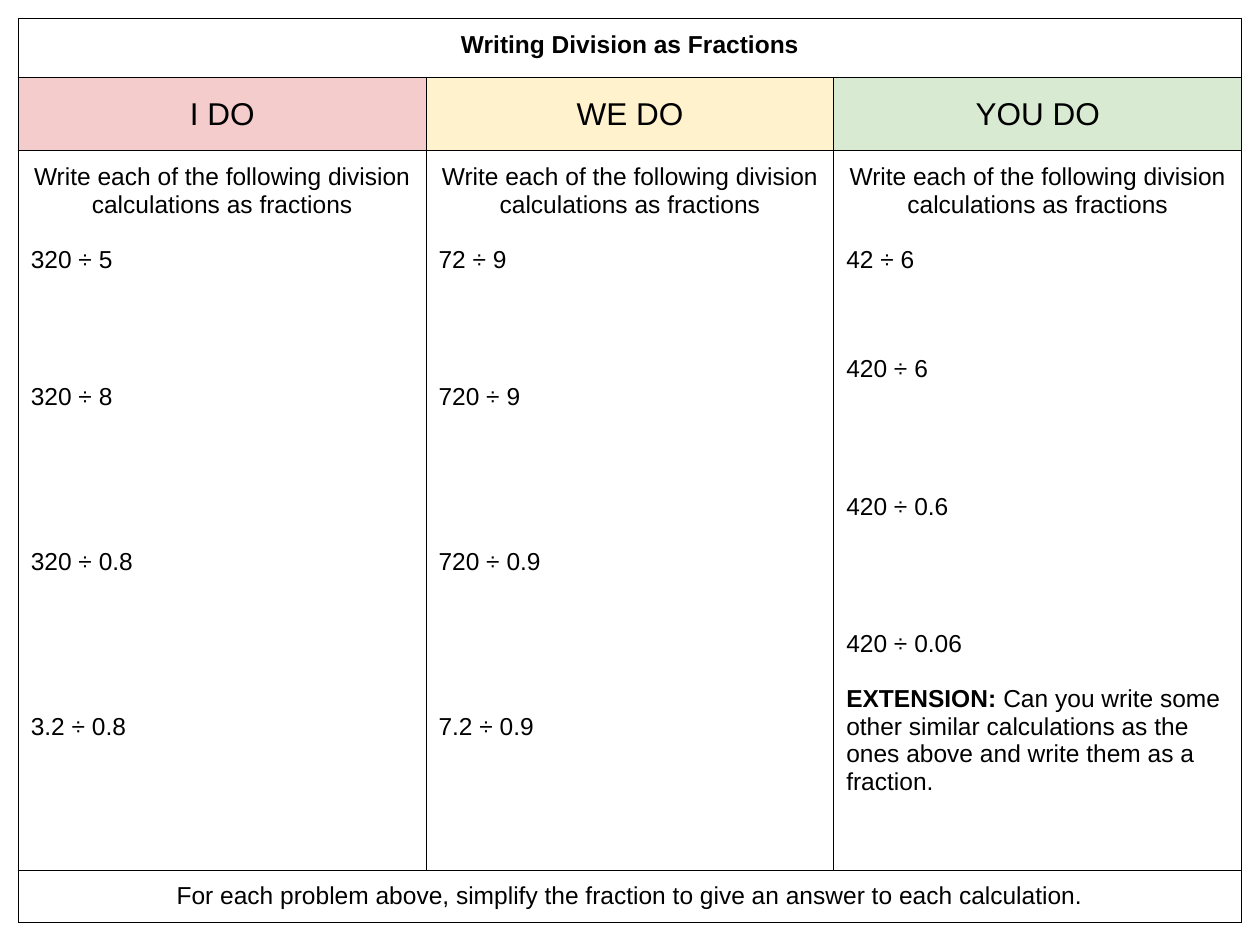
import lxml.etree
import pptx
import pptx.dml.color
import pptx.enum.text
import pptx.oxml.ns
import pptx.util

Cm = pptx.util.Cm
Pt = pptx.util.Pt
ALIGN = pptx.enum.text.PP_ALIGN
ANCHOR = pptx.enum.text.MSO_ANCHOR

FONT = "Arial"
BLACK = "000000"
LINE_PITCH = 15.7  # points taken by one line of 14 pt text

COLUMN_WIDTH = 8.22
ROW_HEIGHTS = [1.2, 1.47, 14.5, 1.05]

TITLE = "Writing Division as Fractions"
INSTRUCTION = "Write each of the following division calculations as fractions"
FOOTER = "For each problem above, simplify the fraction to give an answer to each calculation."
EXTENSION_LABEL = "EXTENSION: "
EXTENSION = ("Can you write some other similar calculations as the ones above "
             "and write them as a fraction.")

# heading, fill, calculations, free lines before each calculation
COLUMNS = [
    ("I DO", "F4CCCC", ["320 ÷ 5", "320 ÷ 8", "320 ÷ 0.8", "3.2 ÷ 0.8"], [1, 4, 5, 5]),
    ("WE DO", "FFF2CC", ["72 ÷ 9", "720 ÷ 9", "720 ÷ 0.9", "7.2 ÷ 0.9"], [1, 4, 5, 5]),
    ("YOU DO", "D9EAD3", ["42 ÷ 6", "420 ÷ 6", "420 ÷ 0.6", "420 ÷ 0.06"], [1, 3, 4, 4]),
]


def color(hex_string):
    return pptx.dml.color.RGBColor.from_string(hex_string)


def add_run(paragraph, text, size=14, bold=False):
    run = paragraph.add_run()
    run.text = text
    run.font.name = FONT
    run.font.size = Pt(size)
    run.font.bold = bold
    run.font.color.rgb = color(BLACK)


def write(cell, text, size=14, bold=False, align=ALIGN.CENTER, lines_before=0, label=None):
    """Write one paragraph into a cell, after any text already there."""
    frame = cell.text_frame
    paragraph = frame.add_paragraph() if frame.text else frame.paragraphs[0]
    paragraph.alignment = align
    if lines_before:
        paragraph.space_before = Pt(lines_before * LINE_PITCH)
    if label:
        add_run(paragraph, label, size, bold=True)
    add_run(paragraph, text, size, bold)


def add_borders(cell, hex_string=BLACK, width=0.75):
    properties = cell._tc.get_or_add_tcPr()
    qn = pptx.oxml.ns.qn
    for side in ("a:lnL", "a:lnR", "a:lnT", "a:lnB"):
        line = lxml.etree.SubElement(properties, qn(side), w=str(Pt(width)))
        fill = lxml.etree.SubElement(line, qn("a:solidFill"))
        lxml.etree.SubElement(fill, qn("a:srgbClr"), val=hex_string)


def format_cell(cell):
    cell.margin_left = cell.margin_right = Cm(0.25)
    cell.margin_top = cell.margin_bottom = Cm(0.25)
    add_borders(cell)
    cell.fill.background()


def add_lesson_table(slide):
    shape = slide.shapes.add_table(
        len(ROW_HEIGHTS), len(COLUMNS), Cm(0.37), Cm(0.37),
        Cm(COLUMN_WIDTH * len(COLUMNS)), Cm(sum(ROW_HEIGHTS)))
    table = shape.table
    table.first_row = table.horz_banding = False
    for column in table.columns:
        column.width = Cm(COLUMN_WIDTH)
    for row, height in zip(table.rows, ROW_HEIGHTS):
        row.height = Cm(height)
    for cell in table.iter_cells():
        format_cell(cell)
    return table


def fill_full_row(table, row, text, **text_format):
    cell = table.cell(row, 0)
    cell.merge(table.cell(row, len(COLUMNS) - 1))
    write(cell, text, **text_format)


def fill_column(table, index, heading, fill, calculations, gaps):
    header = table.cell(1, index)
    header.vertical_anchor = ANCHOR.MIDDLE
    header.fill.solid()
    header.fill.fore_color.rgb = color(fill)
    write(header, heading, size=18)

    body = table.cell(2, index)
    write(body, INSTRUCTION)
    for calculation, gap in zip(calculations, gaps):
        write(body, calculation, align=ALIGN.LEFT, lines_before=gap)


def main():
    presentation = pptx.Presentation()
    presentation.slide_width = Cm(25.4)
    presentation.slide_height = Cm(19.05)
    slide = presentation.slides.add_slide(presentation.slide_layouts[6])

    # Title and closing rows span the table
    table = add_lesson_table(slide)
    fill_full_row(table, 0, TITLE, bold=True)
    fill_full_row(table, 3, FOOTER)

    # Three teaching columns
    for index, column in enumerate(COLUMNS):
        fill_column(table, index, *column)

    # Extension task under the last column
    write(table.cell(2, len(COLUMNS) - 1), EXTENSION, align=ALIGN.LEFT,
          lines_before=1, label=EXTENSION_LABEL)

    presentation.save("out.pptx")


if __name__ == "__main__":
    main()
